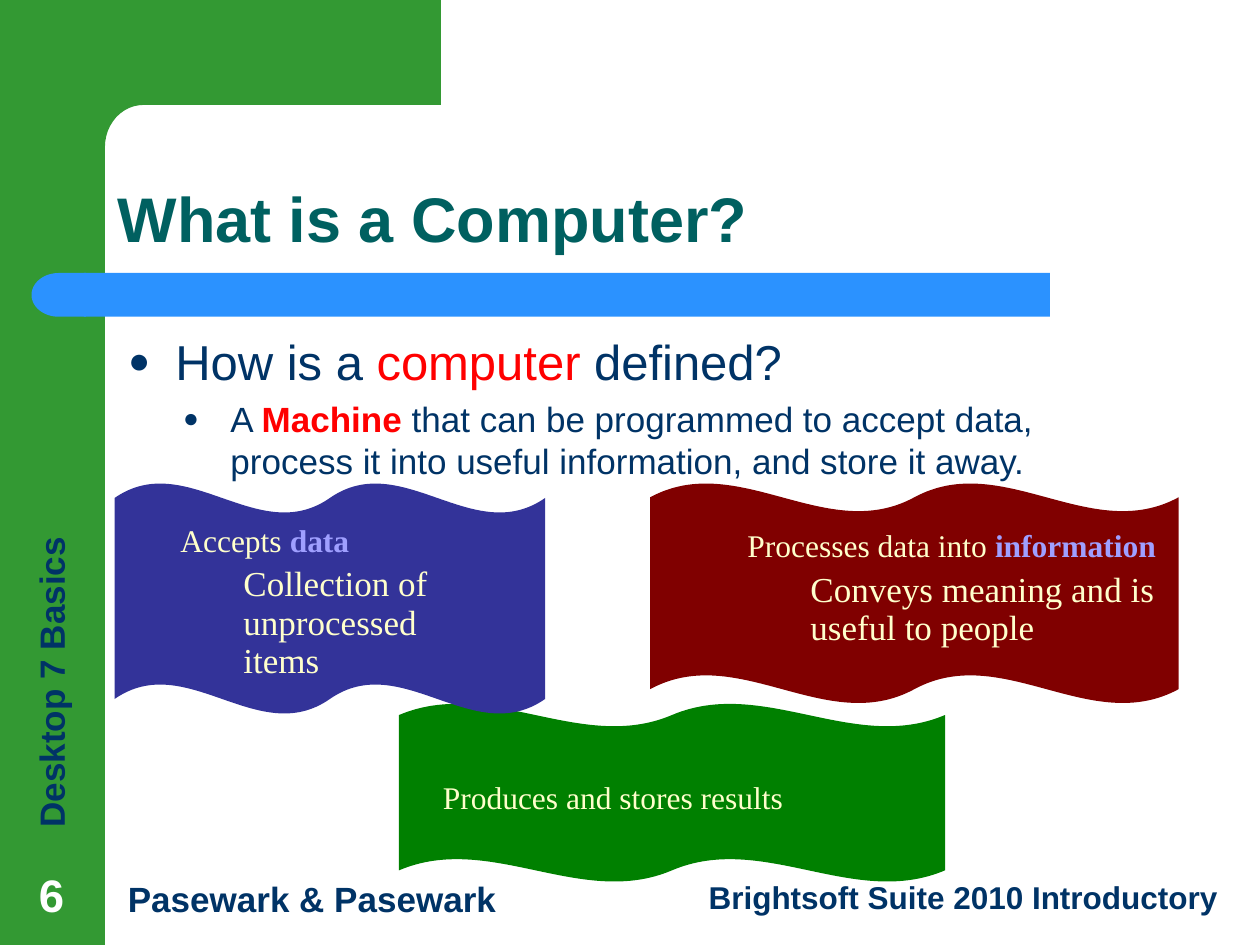
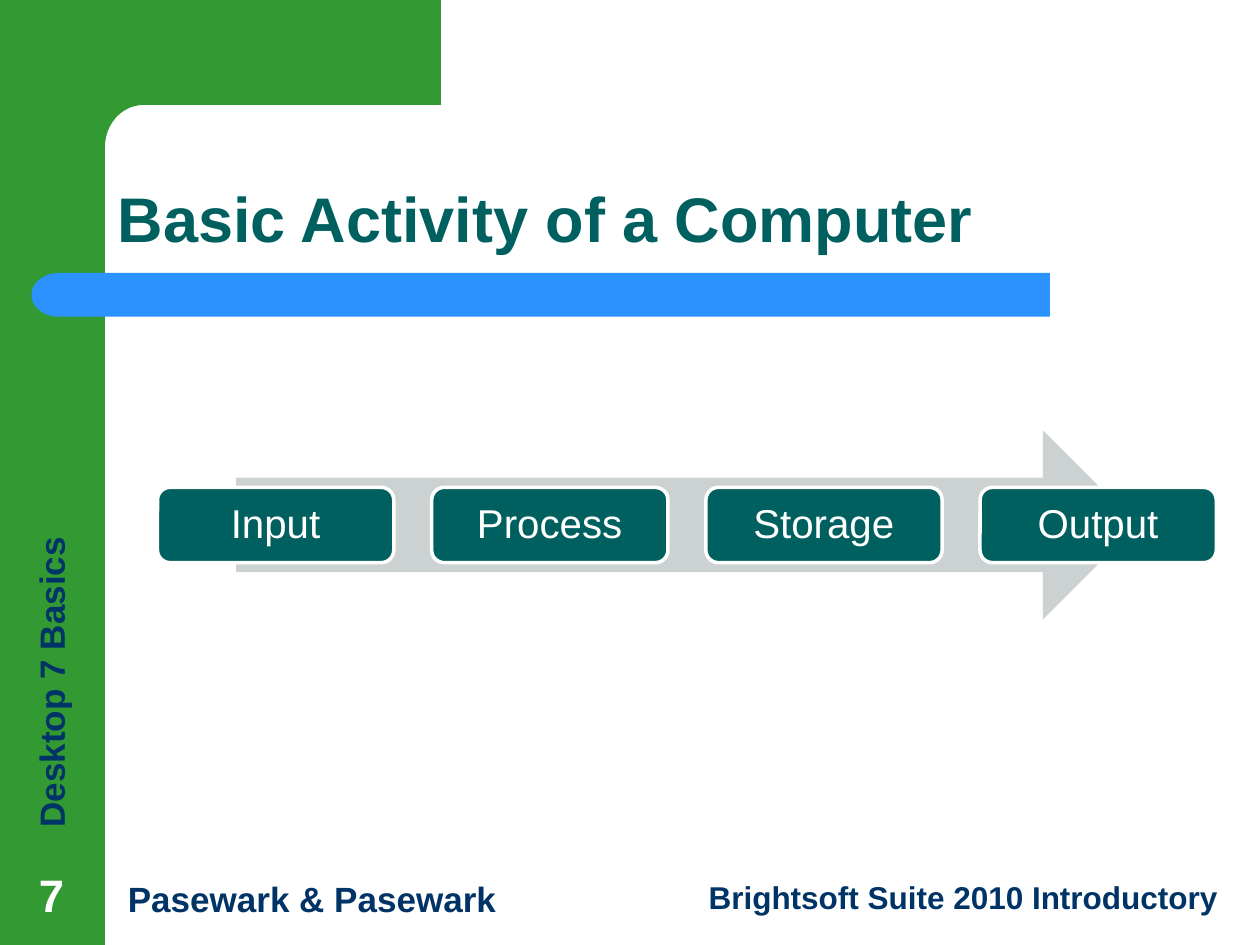
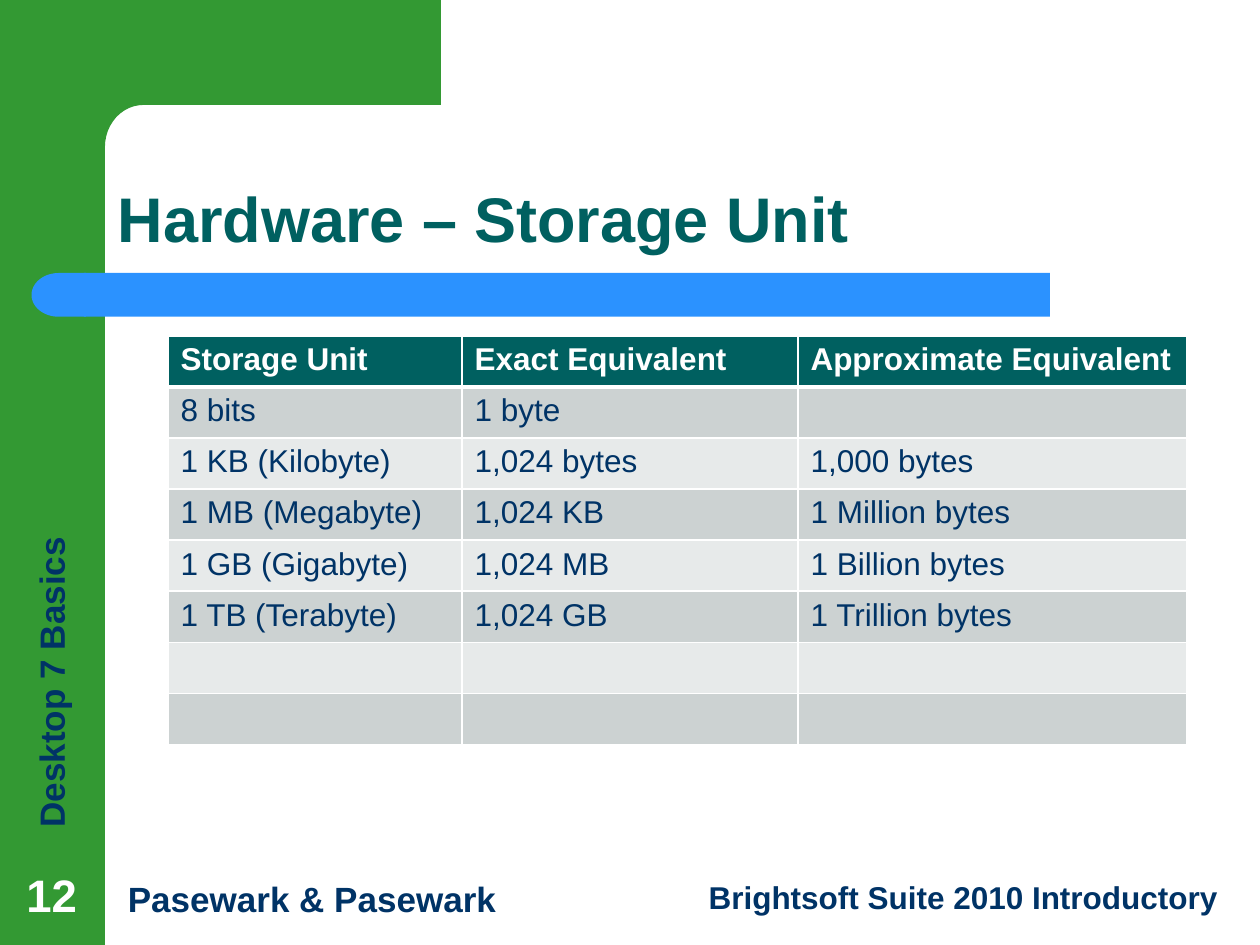
from math import cos, pi, sin

from pptx import Presentation
from pptx.dml.color import RGBColor
from pptx.enum import shapes, text
from pptx.oxml import parse_xml
from pptx.oxml import ns
from pptx.util import Pt

GREEN = RGBColor(0x33, 0x99, 0x33)
BLUE = RGBColor(0x2B, 0x92, 0xFF)
NAVY = RGBColor(0x00, 0x33, 0x66)
TEAL = RGBColor(0x00, 0x60, 0x60)
WHITE = RGBColor(0xFF, 0xFF, 0xFF)
RED = RGBColor(0xFF, 0x00, 0x00)
INDIGO = RGBColor(0x33, 0x33, 0x99)
MAROON = RGBColor(0x80, 0x00, 0x00)
DARK_GREEN = RGBColor(0x00, 0x80, 0x00)
CREAM = RGBColor(0xFF, 0xFF, 0xCC)
LILAC = RGBColor(0x9F, 0x9F, 0xFF)
GRAY = RGBColor(0xCC, 0xD2, 0xD2)
LIGHT_GRAY = RGBColor(0xE7, 0xEA, 0xEA)

SANS = "Arial"
SERIF = "Times New Roman"
SHAPE = shapes.MSO_SHAPE
ALIGN = text.PP_ALIGN
ANCHOR = text.MSO_ANCHOR

TITLE_LAYOUT = 5
TITLE_AND_BODY_LAYOUT = 1

STORAGE_UNITS = [
    ("Storage Unit", "Exact Equivalent", "Approximate Equivalent"),
    ("8 bits", "1 byte", ""),
    ("1 KB (Kilobyte)", "1,024 bytes", "1,000 bytes"),
    ("1 MB (Megabyte)", "1,024 KB", "1 Million bytes"),
    ("1 GB (Gigabyte)", "1,024 MB", "1 Billion bytes"),
    ("1 TB (Terabyte)", "1,024 GB", "1 Trillion bytes"),
    ("", "", ""),
    ("", "", ""),
]


def place(shape, box):
    shape.left, shape.top, shape.width, shape.height = map(Pt, box)


def add_run(paragraph, words, size, color, bold=False, font=SANS):
    run = paragraph.add_run()
    run.text = words
    run.font.name = font
    run.font.size = Pt(size)
    run.font.bold = bold
    run.font.color.rgb = color


def paint(shape, color):
    """Give the shape a flat fill with neither outline nor shadow."""
    shape.shadow.inherit = False
    shape.fill.solid()
    shape.fill.fore_color.rgb = color
    shape.line.fill.background()


def add_flat_shape(slide, kind, box, color):
    shape = slide.shapes.add_shape(kind, *map(Pt, box))
    paint(shape, color)
    return shape


def add_text_box(slide, box):
    frame = slide.shapes.add_textbox(*map(Pt, box)).text_frame
    frame.word_wrap = True
    return frame


def add_label(slide, box, words, size=20, color=NAVY, align=ALIGN.LEFT):
    frame = add_text_box(slide, box)
    paragraph = frame.paragraphs[0]
    paragraph.alignment = align
    add_run(paragraph, words, size, color, bold=True)
    return frame


def set_indent(paragraph, left, first=0):
    properties = paragraph._p.get_or_add_pPr()
    properties.set("marL", str(Pt(left)))
    properties.set("indent", str(Pt(first)))
    return properties


def add_bullet(paragraph, left):
    properties = set_indent(paragraph, left, -27)
    for element in (
        f'<a:buClr {ns.nsdecls("a")}><a:srgbClr val="{NAVY}"/></a:buClr>',
        f'<a:buSzPct {ns.nsdecls("a")} val="75000"/>',
        f'<a:buFont {ns.nsdecls("a")} typeface="{SANS}"/>',
        f'<a:buChar {ns.nsdecls("a")} char="●"/>',
    ):
        properties.append(parse_xml(element))


def add_corner(slide, left, right, band, bottom):
    """Draw the top band and its rounded inner corner against the side band."""
    radius_x, radius_y, steps = 22, 24, 12
    center_x, center_y = band + radius_x, band + radius_y
    angles = [pi / 2 * step / steps for step in range(steps + 1)]
    arc = [(center_x - radius_x * sin(a), center_y - radius_y * cos(a)) for a in angles]
    outline = [(right, 0), (right, band), *arc, (band, bottom), (left, bottom)]
    builder = slide.shapes.build_freeform(Pt(left), 0)
    builder.add_line_segments([(Pt(x), Pt(y)) for x, y in outline])
    paint(builder.convert_to_shape(), GREEN)


def add_frame(slide, number):
    """Add the bands, footers and slide number that every slide carries."""
    add_flat_shape(slide, SHAPE.RECTANGLE, (0, 0, 60, 540), GREEN)
    add_corner(slide, 36, 252, 60, 92)
    add_flat_shape(slide, SHAPE.RECTANGLE, (48, 156, 552, 25), BLUE)
    cap = add_flat_shape(slide, SHAPE.FLOWCHART_DELAY, (18, 156, 31, 25), BLUE)
    cap.rotation = 180
    side = add_label(slide, (13.5, 186, 39, 294), "Desktop 7 Basics")
    side._txBody.bodyPr.set("vert", "vert270")
    add_label(slide, (66, 498, 240, 32), "Pasewark & Pasewark")
    add_label(slide, (372, 498, 331, 29), "Brightsoft Suite 2010 Introductory",
              size=18, align=ALIGN.RIGHT)
    page = add_label(slide, (6.5, 492, 46, 38), str(number), 26, WHITE, ALIGN.CENTER)
    page.vertical_anchor = ANCHOR.BOTTOM


def add_framed_slide(presentation, layout, title, number, title_width=624):
    slide = presentation.slides.add_slide(presentation.slide_layouts[layout])
    place(slide.shapes.title, (60, 60, title_width, 90))
    frame = slide.shapes.title.text_frame
    frame.auto_size = text.MSO_AUTO_SIZE.NONE
    frame.vertical_anchor = ANCHOR.BOTTOM
    paragraph = frame.paragraphs[0]
    paragraph.alignment = ALIGN.LEFT
    paragraph.line_spacing = 0.9
    add_run(paragraph, title, 36, TEAL, bold=True)
    add_frame(slide, number)
    return slide


def add_definition(body, box):
    place(body, box)
    frame = body.text_frame
    frame.auto_size = text.MSO_AUTO_SIZE.NONE
    question = frame.paragraphs[0]
    question.space_before = Pt(0)
    add_bullet(question, 27)
    add_run(question, "How is a ", 28, NAVY)
    add_run(question, "computer", 28, RED)
    add_run(question, " defined?", 28, NAVY)

    answer = frame.add_paragraph()
    answer.level = 1
    answer.space_before = Pt(4)
    add_bullet(answer, 58.5)
    add_run(answer, "A ", 20, NAVY)
    add_run(answer, "Machine ", 20, RED, bold=True)
    add_run(answer, "that can be programmed to accept data, process it into "
            "useful information, and store it away.", 20, NAVY)


def add_wave(slide, box, color, text_offset, text_size, lead, term="", detail=()):
    """Draw a wave with a lead line and, indented below it, the detail lines."""
    wave = add_flat_shape(slide, SHAPE.DOUBLE_WAVE, box, color)
    wave.adjustments[0] = 0.065
    left, top = box[0] + text_offset[0], box[1] + text_offset[1]
    frame = add_text_box(slide, (left, top, *text_size))
    paragraph = frame.paragraphs[0]
    add_run(paragraph, lead, 18, CREAM, font=SERIF)
    if term:
        add_run(paragraph, term, 18, LILAC, bold=True, font=SERIF)
    if detail:
        paragraph = frame.add_paragraph()
        set_indent(paragraph, 36)
        paragraph.line_spacing = Pt(22)
        paragraph.space_before = Pt(4)
    for index, line in enumerate(detail):
        if index:
            paragraph.add_line_break()
        add_run(paragraph, line, 20, CREAM, font=SERIF)


def add_process(slide, box, steps):
    """Spread the steps evenly over an arrow that runs across the box."""
    left, top, width, height = box
    card_width, card_height, inset = 135, 43, 45
    add_flat_shape(slide, SHAPE.RIGHT_ARROW,
                   (left + inset, top, width - 2 * inset, height), GRAY)
    pitch = (width - card_width) / (len(steps) - 1)
    card_top = top + (height - card_height) / 2
    for index, step in enumerate(steps):
        card = add_flat_shape(slide, SHAPE.ROUNDED_RECTANGLE,
                              (left + index * pitch, card_top, card_width, card_height),
                              TEAL)
        card.line.color.rgb = WHITE
        card.line.width = Pt(2)
        frame = card.text_frame
        frame.vertical_anchor = ANCHOR.MIDDLE
        paragraph = frame.paragraphs[0]
        paragraph.alignment = ALIGN.CENTER
        paragraph.line_spacing = 0.9
        add_run(paragraph, step, 23, WHITE)


def set_borders(cell, top, bottom):
    properties = cell._tc.get_or_add_tcPr()
    for side, width in (("L", 1), ("R", 1), ("T", top), ("B", bottom)):
        properties.append(parse_xml(
            f'<a:ln{side} {ns.nsdecls("a")} w="{Pt(width)}"><a:solidFill>'
            f'<a:srgbClr val="{WHITE}"/></a:solidFill></a:ln{side}>'))


def add_storage_table(slide, box, column_widths, rows):
    table = slide.shapes.add_table(len(rows), len(column_widths), *map(Pt, box)).table
    for column, width in zip(table.columns, column_widths):
        column.width = Pt(width)
    for index, values in enumerate(rows):
        header = index == 0
        fill = TEAL if header else GRAY if index % 2 else LIGHT_GRAY
        for cell, value in zip(table.rows[index].cells, values):
            set_borders(cell, top=3 if index == 1 else 1, bottom=3 if header else 1)
            cell.fill.solid()
            cell.fill.fore_color.rgb = fill
            if value:
                add_run(cell.text_frame.paragraphs[0], value, 18,
                        WHITE if header else NAVY, bold=header)


def build_definition_slide(presentation):
    slide = add_framed_slide(presentation, TITLE_AND_BODY_LAYOUT,
                             "What is a Computer?", 6)
    add_definition(slide.placeholders[1], (66, 186, 606, 108))
    add_wave(slide, (228, 402, 312, 102), DARK_GREEN, (18, 39), (274, 29),
             "Produces and stores results")
    add_wave(slide, (371.5, 276, 302, 126), MAROON, (48.5, 21), (276, 78),
             "Processes data into ", "information",
             ("Conveys meaning and is", "useful to people"))
    add_wave(slide, (65.5, 276, 246, 132), INDIGO, (30.5, 18), (179, 100),
             "Accepts ", "data", ("Collection of unprocessed items",))


def build_activity_slide(presentation):
    slide = add_framed_slide(presentation, TITLE_LAYOUT,
                             "Basic Activity of a Computer", 7)
    add_process(slide, (90, 246, 605, 108), ("Input", "Process", "Storage", "Output"))


def build_storage_slide(presentation):
    slide = add_framed_slide(presentation, TITLE_LAYOUT,
                             "Hardware – Storage Unit", 12, title_width=660)
    add_storage_table(slide, (96, 192, 582, 233.5), (168, 192, 222), STORAGE_UNITS)


def main():
    presentation = Presentation()
    presentation.slide_width, presentation.slide_height = Pt(720), Pt(540)
    build_definition_slide(presentation)
    build_activity_slide(presentation)
    build_storage_slide(presentation)
    presentation.save("out.pptx")


if __name__ == "__main__":
    main()
